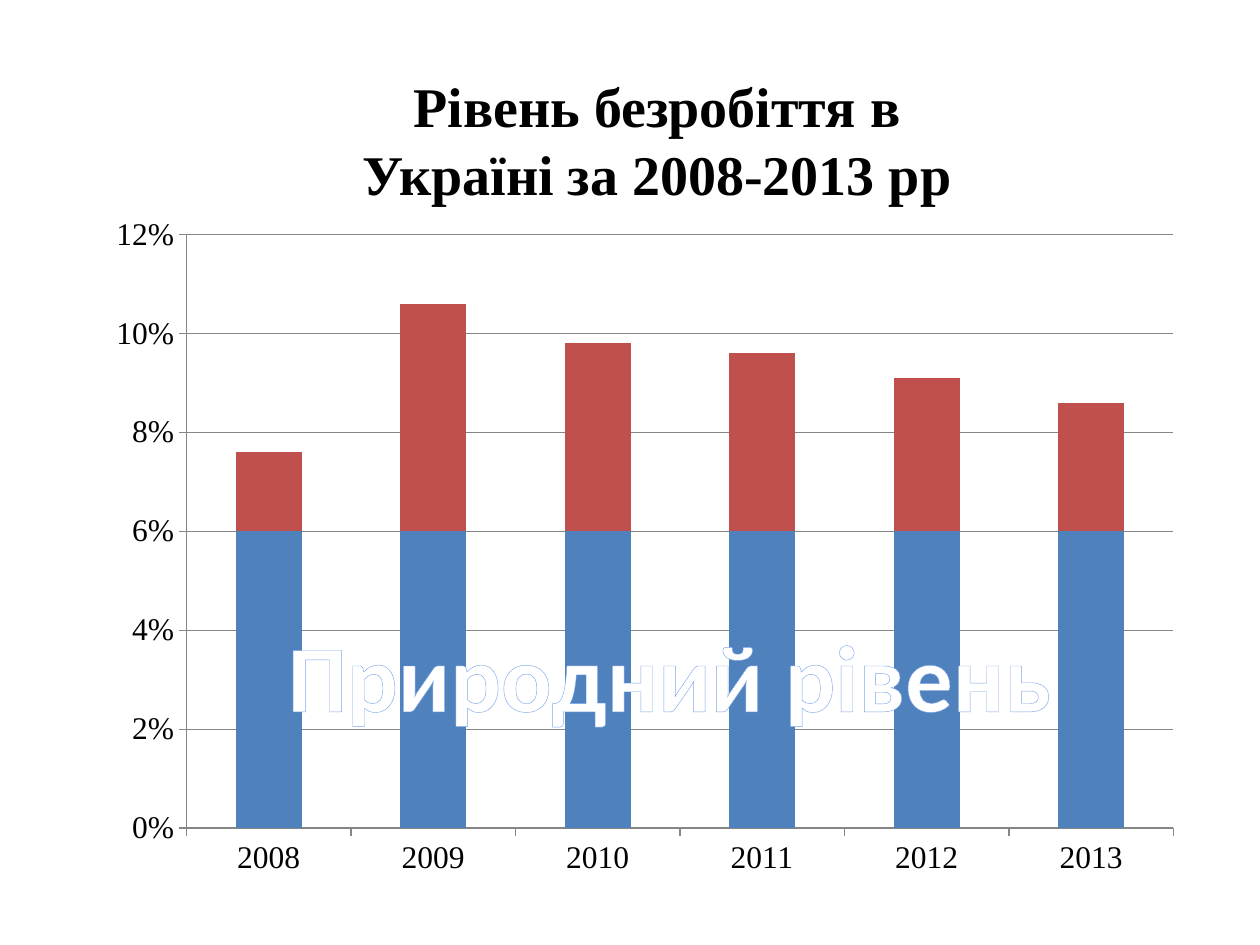
from lxml import etree
from pptx import Presentation
from pptx.chart.data import CategoryChartData
from pptx.dml.color import RGBColor
from pptx.enum.chart import XL_CHART_TYPE, XL_TICK_MARK
from pptx.enum.text import MSO_ANCHOR, MSO_AUTO_SIZE, PP_ALIGN
from pptx.oxml.ns import qn
from pptx.util import Cm, Pt

STACKED = XL_CHART_TYPE.COLUMN_STACKED
OUTSIDE = XL_TICK_MARK.OUTSIDE
CENTER = PP_ALIGN.CENTER
TOP = MSO_ANCHOR.TOP
FIT_SHAPE = MSO_AUTO_SIZE.SHAPE_TO_FIT_TEXT

SERIF = "Times New Roman"
COLORS = {
    "text": "000000",
    "natural": "4F81BD",
    "excess": "C0504D",
    "axis": "868686",
    "caption": "FFFFFF",
    "outline": "7EA6EA",
}


def color(name):
    return RGBColor.from_string(COLORS[name])


def write_text(shape, text, *, size, font, fill, wrap=True, outline=None):
    """Fill a shape with one centred bold paragraph, optionally outlined."""
    frame = shape.text_frame
    frame.word_wrap = wrap
    frame.auto_size = FIT_SHAPE
    frame.vertical_anchor = TOP
    paragraph = frame.paragraphs[0]
    paragraph.alignment = CENTER
    run = paragraph.add_run()
    run.text = text
    run.font.size = Pt(size)
    run.font.name = font
    run.font.bold = True
    run.font.color.rgb = color(fill)
    if outline:
        line = etree.Element(qn("a:ln"), w=str(Pt(2.48)))
        solid = etree.SubElement(line, qn("a:solidFill"))
        etree.SubElement(solid, qn("a:srgbClr"), val=COLORS[outline])
        run.font._element.insert(0, line)


presentation = Presentation()
presentation.slide_width = Cm(25.4)
presentation.slide_height = Cm(19.05)
slide = presentation.slides.add_slide(presentation.slide_layouts[5])

# Chart
data = CategoryChartData(number_format="0%")
data.categories = ["2008", "2009", "2010", "2011", "2012", "2013"]
data.add_series("Series 1", [0.06] * 6)
data.add_series("Series 2", [0.016, 0.046, 0.038, 0.036, 0.031, 0.026])
chart = slide.shapes.add_chart(
    STACKED, Cm(1.9), Cm(4.11), Cm(22.2), Cm(13.8), data
).chart
chart.has_title = False
chart.has_legend = False
chart.font.size = Pt(18)
chart.font.name = SERIF
chart.font.color.rgb = color("text")

plot = chart.plots[0]
plot.gap_width = 150
plot.overlap = 100
plot.vary_by_categories = False
for series, name in zip(plot.series, ("natural", "excess")):
    series.format.fill.solid()
    series.format.fill.fore_color.rgb = color(name)

value_axis = chart.value_axis
value_axis.minimum_scale = 0
value_axis.maximum_scale = 0.12
value_axis.major_unit = 0.02
value_axis.has_major_gridlines = True
value_axis.tick_labels.number_format = "0%"
value_axis.tick_labels.number_format_is_linked = False
for axis in (chart.category_axis, value_axis):
    axis.major_tick_mark = OUTSIDE
for lined in (chart.category_axis, value_axis, value_axis.major_gridlines):
    lined.format.line.color.rgb = color("axis")
    lined.format.line.width = Pt(0.75)

# Title
title = slide.shapes.title
title.left, title.top, title.width, title.height = Cm(6.9), Cm(1.32), Cm(12.7), Cm(3)
write_text(title, "Рівень безробіття в Україні за 2008-2013 рр",
           size=32, font=SERIF, fill="text")

# Caption over the lower bars
caption = slide.shapes.add_textbox(Cm(5.5), Cm(12.32), Cm(16), Cm(2.56))
write_text(caption, "Природний рівень", size=54, font="Calibri",
           fill="caption", wrap=False, outline="outline")

presentation.save("out.pptx")
